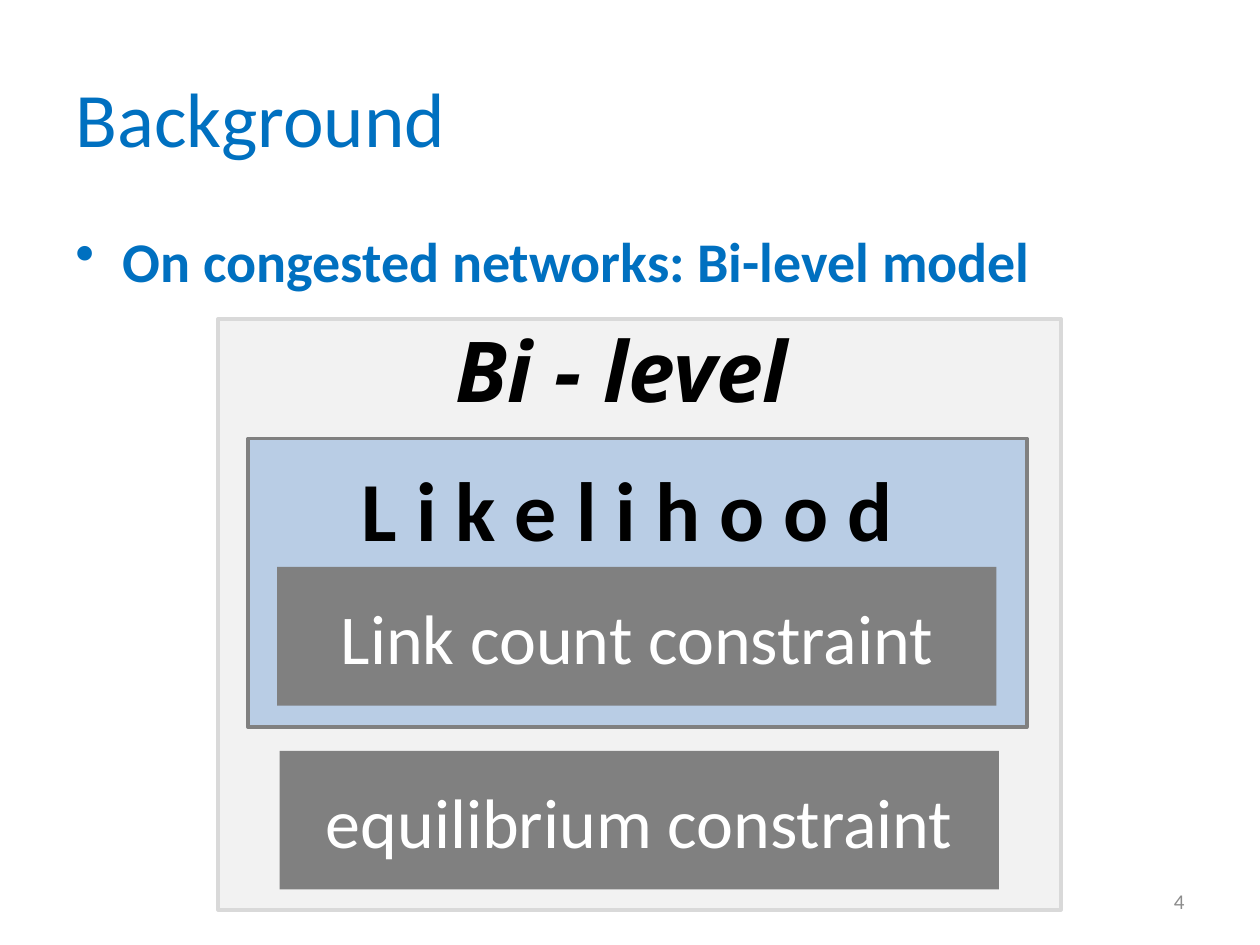
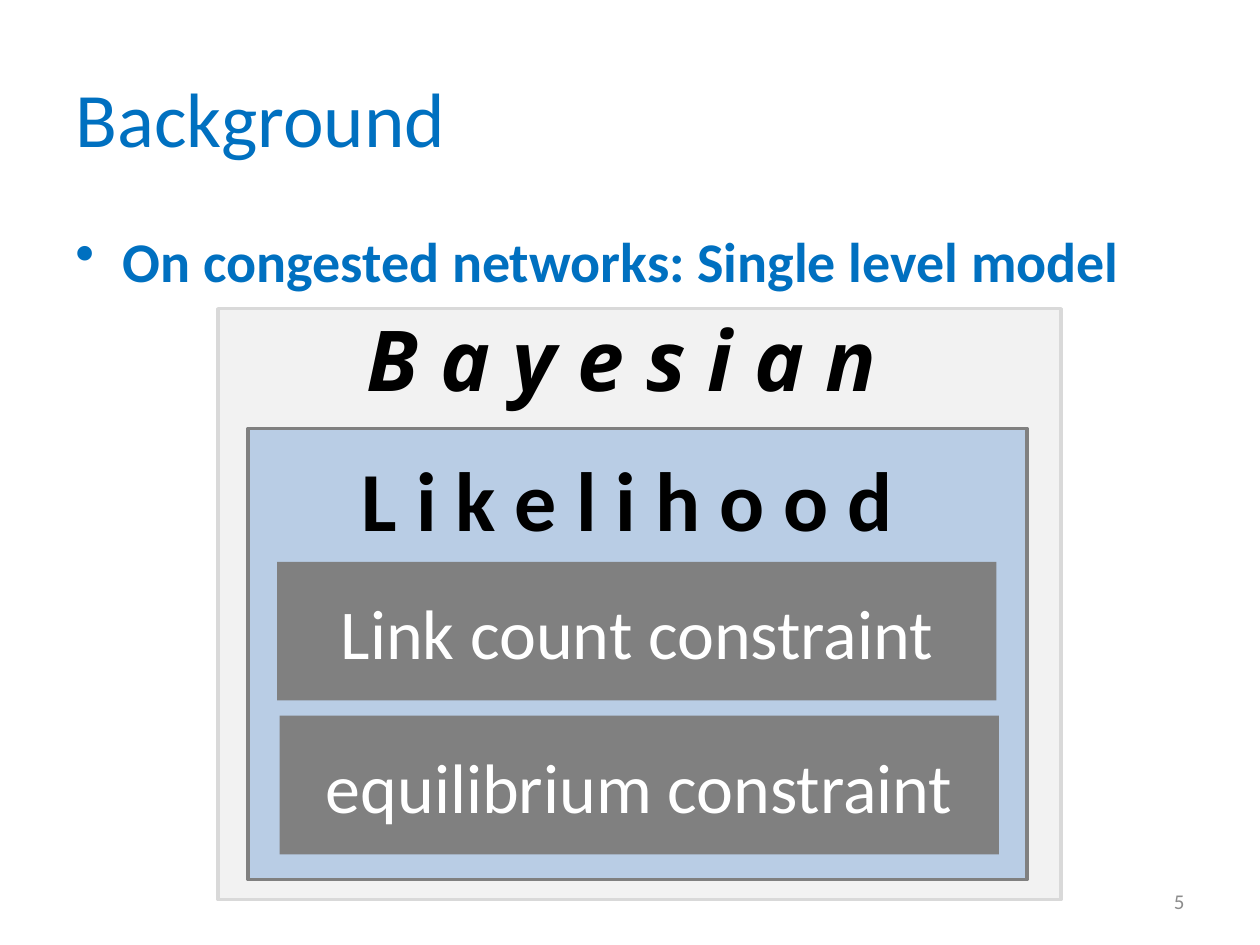
import dataclasses

import pptx
import pptx.dml.color
import pptx.enum.shapes
import pptx.enum.text
import pptx.oxml.ns
import pptx.util
from lxml import etree

Pt = pptx.util.Pt
ALIGN = pptx.enum.text.PP_ALIGN
ANCHOR = pptx.enum.text.MSO_ANCHOR


def rgb(value):
    return pptx.dml.color.RGBColor.from_string(value)


@dataclasses.dataclass(frozen=True)
class Theme:
    accent: str = "0070C0"
    panel: str = "F2F2F2"
    panel_line: str = "D9D9D9"
    inner: str = "B9CDE5"
    grey: str = "808080"
    white: str = "FFFFFF"
    black: str = "000000"
    number: str = "8C8C8C"
    font: str = "Calibri"
    heading_font: str = "Open Sans"
    title_size: int = 44
    bullet_size: int = 32
    heading_size: int = 48
    block_size: int = 40
    number_size: int = 12
    line_width: int = 2


class Deck:
    """Holds the theme and the slide being drawn."""

    def __init__(self, theme):
        self.theme = theme
        self.prs = pptx.Presentation()
        self.prs.slide_width, self.prs.slide_height = Pt(720), Pt(540)

    def new_slide(self):
        self.s = self.prs.slides.add_slide(self.prs.slide_layouts[6])

    def fill_text(self, sp, text, size, color, align=ALIGN.CENTER,
                  anchor=ANCHOR.MIDDLE, **font):
        tf = sp.text_frame
        tf.word_wrap = True
        tf.vertical_anchor = anchor
        p = tf.paragraphs[0]
        p.alignment = align
        r = p.add_run()
        r.text = text
        r.font.color.rgb = rgb(color)
        for name, value in ({"name": self.theme.font, "size": Pt(size)} | font).items():
            setattr(r.font, name, value)
        return p

    def text(self, box, *args, **kwargs):
        sp = self.s.shapes.add_textbox(*map(Pt, box))
        return self.fill_text(sp, *args, **kwargs)

    def rect(self, box, fill, line=None):
        sp = self.s.shapes.add_shape(
            pptx.enum.shapes.MSO_SHAPE.RECTANGLE, *map(Pt, box))
        sp.shadow.inherit = False
        sp.fill.solid()
        sp.fill.fore_color.rgb = rgb(fill)
        if line:
            sp.line.color.rgb = rgb(line)
            sp.line.width = Pt(self.theme.line_width)
        else:
            sp.line.fill.background()
        return sp

    def block(self, left, top, label):
        t = self.theme
        sp = self.rect((left, top, 411, 79.2), t.grey)
        self.fill_text(sp, label, t.block_size, t.white)

    def title(self, label):
        t = self.theme
        self.text((36, 21.6, 648, 90), label, t.title_size, t.accent, ALIGN.LEFT)

    def bullet(self, label):
        t = self.theme
        p = self.text((36, 126, 648, 356.4), label, t.bullet_size, t.accent,
                      ALIGN.LEFT, ANCHOR.TOP, bold=True)
        p.space_before = Pt(0.2 * t.bullet_size)
        pPr = p._p.get_or_add_pPr()
        pPr.set("marL", str(Pt(27)))
        pPr.set("indent", str(-Pt(27)))
        etree.SubElement(pPr, pptx.oxml.ns.qn("a:buChar")).set("char", "•")

    def page_number(self, number):
        t = self.theme
        self.text((516.2, 500.4, 167.8, 28.8), str(number), t.number_size,
                  t.number, ALIGN.RIGHT)

    def nested_model(self, top, heading, inner_height, count_top, equilibrium_top):
        """Draw the outer panel at top, with the likelihood box and both constraints."""
        t = self.theme
        self.rect((124.6, top, 481.7, 337.7), t.panel, t.panel_line)
        self.rect((141.8, top + 68.4, 445, inner_height), t.inner, t.grey)
        self.block(158.4, count_top, "Link count constraint")
        self.text((158.4, top + 77, 411, 62.6), "L i k e l i h o o d ",
                  t.heading_size, t.black, bold=True)
        self.block(159.8, equilibrium_top, "equilibrium constraint")
        self.text((156.2, top - 2.9, 411, 62.6), heading, t.heading_size,
                  t.black, name=t.heading_font, bold=True, italic=True)


def main():
    deck = Deck(Theme())
    slides = [
        ("Bi-level", (182.2, "Bi - level ", 164.9, 324, 429.1)),
        ("Single level", (176.4, "B a y e s i a n ", 257.8, 321.1, 409)),
    ]
    for number, (model, layout) in enumerate(slides, start=4):
        deck.new_slide()
        deck.title("Background")
        deck.bullet(f"On congested networks: {model} model")
        deck.nested_model(*layout)
        deck.page_number(number)
    deck.prs.save("out.pptx")


if __name__ == "__main__":
    main()
